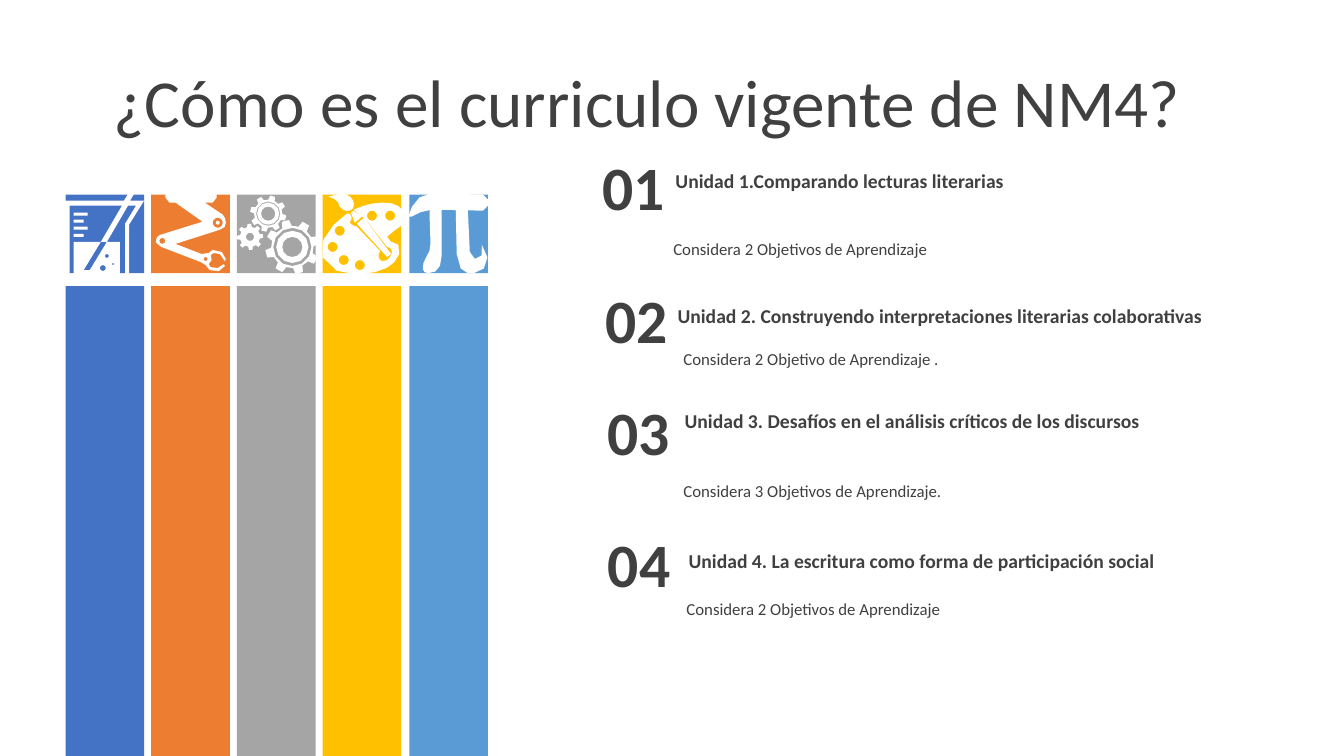
from math import cos, radians, sin

from pptx import Presentation
from pptx.dml.color import RGBColor
from pptx.enum.shapes import MSO_SHAPE
from pptx.enum.text import MSO_ANCHOR, MSO_AUTO_SIZE, PP_ALIGN
from pptx.util import Pt

PX = 9144  # EMU per px, 100 px to the inch
FINE = 10  # icon path units per px
FONT, INK, WHITE = "Calibri", "404040", "FFFFFF"
SUBJECT_COLORS = ["4472C4", "ED7D31", "A5A5A5", "FFC000", "5B9BD5"]
COLUMN_LEFT, COLUMN_WIDTH, COLUMN_SPAN = 65, 78, 341

# Each unit: number, heading and detail as (left, top, width, height, text)
UNITS = [
    ((576, 143, 105, 105, "01"),
     (658, 163, 567, 34, "Unidad 1.Comparando lecturas literarias"),
     (658, 232, 480, 30, "Considera 2 Objetivos de Aprendizaje")),
    ((579, 275, 105, 84, "02"),
     (660, 297, 575, 34, "Unidad 2. Construyendo interpretaciones literarias colaborativas"),
     (668, 341, 493, 30, "Considera 2 Objetivo de Aprendizaje .")),
    ((581, 386, 105, 84, "03"),
     (667, 401, 558, 34, "Unidad 3. Desafíos en el análisis críticos de los discursos"),
     (668, 472, 493, 30, "Considera 3 Objetivos de Aprendizaje.")),
    ((581, 517, 106, 84, "04"),
     (671, 540, 585, 34, "Unidad 4. La escritura como forma de participación social"),
     (671, 589, 493, 30, "Considera 2 Objetivos de Aprendizaje")),
]

# Icon outlines: a pair is a corner, six numbers are a curve
BEAKER = [
    [(137, 176), (143, 176), (129, 199), (143, 199), (128, 223), (128, 282),
     (64, 282), (64, 199), (123, 199)],
    [(113, 204), (69, 204), (69, 277), (124, 277), (124, 222), (135, 204),
     (127, 204), (106, 240), (100, 240), (121, 204)],
    [(73, 240), (100, 240), (83, 268), (89, 268), (106, 240), (119, 240),
     (119, 273), (73, 273)],
]
ROBOT_ARM = [
    (164, 192), (215, 192), (215, 196), (211, 201), (203, 201), (221, 213),
    (224, 216, 225, 221, 223, 225), (218, 228), (174, 242), (200, 252),
    (207, 251), (211, 248), (220, 250), (224, 257), (223, 259), (218, 252),
    (212, 251), (209, 253), (210, 258), (207, 262), (209, 265), (216, 266),
    (222, 262), (223, 264), (217, 269), (208, 268), (204, 263), (199, 260),
    (160, 245), (155, 241), (154, 237, 156, 234, 159, 233), (201, 220),
    (174, 201), (168, 201), (164, 196),
]
PALETTE = [
    [(380, 201), (389, 201, 397, 203, 400, 210), (408, 228, 385, 228, 384, 235),
     (382, 243, 402, 237, 396, 252), (392, 262, 386, 266, 372, 270),
     (359, 274, 328, 275, 320, 255), (314, 238, 331, 221, 344, 212),
     (347, 212), (349, 216), (347, 221), (348, 223, 351, 224, 354, 225),
     (377, 249), (375, 252, 375, 256, 377, 258), (379, 260, 384, 259, 386, 256),
     (389, 253, 390, 248, 387, 246), (384, 245), (363, 218), (351, 208),
     (359, 204, 370, 201, 380, 201)],
    [(361, 216), (388, 252), (384, 255), (354, 222)],
    [(351, 209), (359, 215), (352, 221), (348, 211)],
    [(339, 192), (343, 193), (348, 194, 351, 199, 351, 202),
     (351, 206, 350, 208, 347, 209), (344, 210, 340, 209, 337, 205),
     (335, 199, 335, 199, 326, 195)],
]
PAINT_WELLS = [(357, 263), (341, 258), (330, 245), (337, 229), (369, 214), (387, 214)]
PI_STROKES = [
    [(484, 198), (484, 204), (479, 209), (455, 209, 449, 208, 428, 208),
     (416, 208, 405, 219, 405, 215), (407, 206, 414, 192, 427, 192),
     (479, 193)],
    [(425, 271), (420, 271, 418, 268, 420, 261), (423, 253, 427, 251, 427, 242),
     (427, 231, 426, 223, 426, 207), (438, 207), (438, 254),
     (438, 266, 433, 271, 425, 271)],
    [(470, 271), (464, 271, 455, 273, 453, 252), (452, 207), (464, 207),
     (466, 250), (468, 263, 483, 256, 478, 243), (489, 255, 482, 271, 470, 271)],
]
# Center, tip radius, root radius, turn in degrees, ring radii
GEARS = [
    (290, 245, 27, 21, 30, (19, 16, 10)),
    (266, 212, 18, 14, 14, (12, 11, 7)),
    (248, 235, 13, 10, -3, (4,)),
]


def rgb(color):
    return RGBColor.from_string(color)


def paint(sp, color):
    sp.shadow.inherit = False
    sp.fill.solid()
    sp.fill.fore_color.rgb = rgb(color)
    sp.line.fill.background()


def add_text(s, box, size, bold=False, align=PP_ALIGN.LEFT, inset=12, anchor=MSO_ANCHOR.TOP):
    *frame, text = box
    tf = s.shapes.add_textbox(*(v * PX for v in frame)).text_frame
    tf.word_wrap = True
    tf.auto_size = MSO_AUTO_SIZE.SHAPE_TO_FIT_TEXT
    tf.vertical_anchor = anchor
    tf.margin_left = tf.margin_right = inset * PX
    tf.margin_top = tf.margin_bottom = 5 * PX
    p = tf.paragraphs[0]
    p.text = text
    p.alignment = align
    font = p.runs[0].font
    font.name, font.size, font.bold = FONT, Pt(size), bold
    font.color.rgb = rgb(INK)


def add_rect(s, left, top, width, height, color):
    sp = s.shapes.add_shape(MSO_SHAPE.RECTANGLE, *(v * PX for v in (left, top, width, height)))
    paint(sp, color)


def polar(cx, cy, radius, degrees):
    return cx + radius * cos(radians(degrees)), cy + radius * sin(radians(degrees))


def circle(cx, cy, radius):
    step = 45 if radius < 4 else 30
    return [polar(cx, cy, radius, a) for a in range(0, 360, step)]


def block(left, top, width, height):
    right, bottom = left + width, top + height
    return [(left, top), (right, top), (right, bottom), (left, bottom)]


def gear(cx, cy, tip, root, turn):
    profile = ((-13, root), (-8, tip), (8, tip), (13, root))
    return [polar(cx, cy, radius, turn + tooth + a)
            for tooth in range(0, 360, 45) for a, radius in profile]


def flatten(outline, steps=3):
    points = []
    for item in outline:
        if len(item) == 2:
            points.append(item)
            continue
        curve = [points[-1], item[:2], item[2:4], item[4:]]
        for t in (n / steps for n in range(1, steps + 1)):
            weights = ((1 - t) ** 3, 3 * t * (1 - t) ** 2, 3 * t * t * (1 - t), t ** 3)
            points.append(tuple(sum(w * pt[axis] for w, pt in zip(weights, curve))
                                for axis in (0, 1)))
    return points


def add_icon(s, outlines):
    """Draw the outlines as one white shape; inner outlines become holes."""
    builder = None
    for outline in outlines:
        start, *rest = [(x * FINE, y * FINE) for x, y in flatten(outline)]
        if builder is None:
            builder = s.shapes.build_freeform(*start, scale=PX / FINE)
        else:
            builder.move_to(*start)
        builder.add_line_segments(rest, close=True)
    paint(builder.convert_to_shape(), WHITE)


def add_subject_icons(s):
    # Robot arm with its joints
    joints = [circle(204, 257, 2), circle(161, 239, 3), circle(216, 221, 5), circle(216, 221, 2)]
    add_icon(s, [ROBOT_ARM, *joints])
    # Palette and brush
    add_icon(s, PALETTE + [circle(x, y, 5) for x, y in PAINT_WELLS])
    # Pi
    for stroke in PI_STROKES:
        add_icon(s, [stroke])
    # Beaker with scale marks and bubbles
    marks = [block(73, 211 + 7 * i, 10 if i % 2 else 14, 3) for i in range(4)]
    bubbles = [circle(102, 266, 3), circle(112, 262, 1), circle(106, 254, 2)]
    add_icon(s, BEAKER + marks + bubbles)
    # Gears
    for cx, cy, tip, root, turn, rings in GEARS:
        add_icon(s, [gear(cx, cy, tip, root, turn), *(circle(cx, cy, r) for r in rings)])


def main():
    prs = Presentation()
    prs.slide_width, prs.slide_height = 1333 * PX, 750 * PX
    s = prs.slides.add_slide(prs.slide_layouts[6])

    # Title
    add_text(s, (103, 54, 1131, 91, "¿Cómo es el curriculo vigente de NM4?"), 48,
             inset=10, anchor=MSO_ANCHOR.MIDDLE)

    # Units
    for number, heading, detail in UNITS:
        add_text(s, detail, 12, inset=10)
        add_text(s, heading, 14, bold=True)
        add_text(s, number, 44, bold=True, align=PP_ALIGN.CENTER)

    # Subject tiles and columns
    for i, color in enumerate(SUBJECT_COLORS):
        left = COLUMN_LEFT + i * COLUMN_SPAN // 4
        add_rect(s, left, 193, COLUMN_WIDTH, 78, color)
        add_rect(s, left, 284, COLUMN_WIDTH, 466, color)
    add_subject_icons(s)

    prs.save("out.pptx")


if __name__ == "__main__":
    main()
